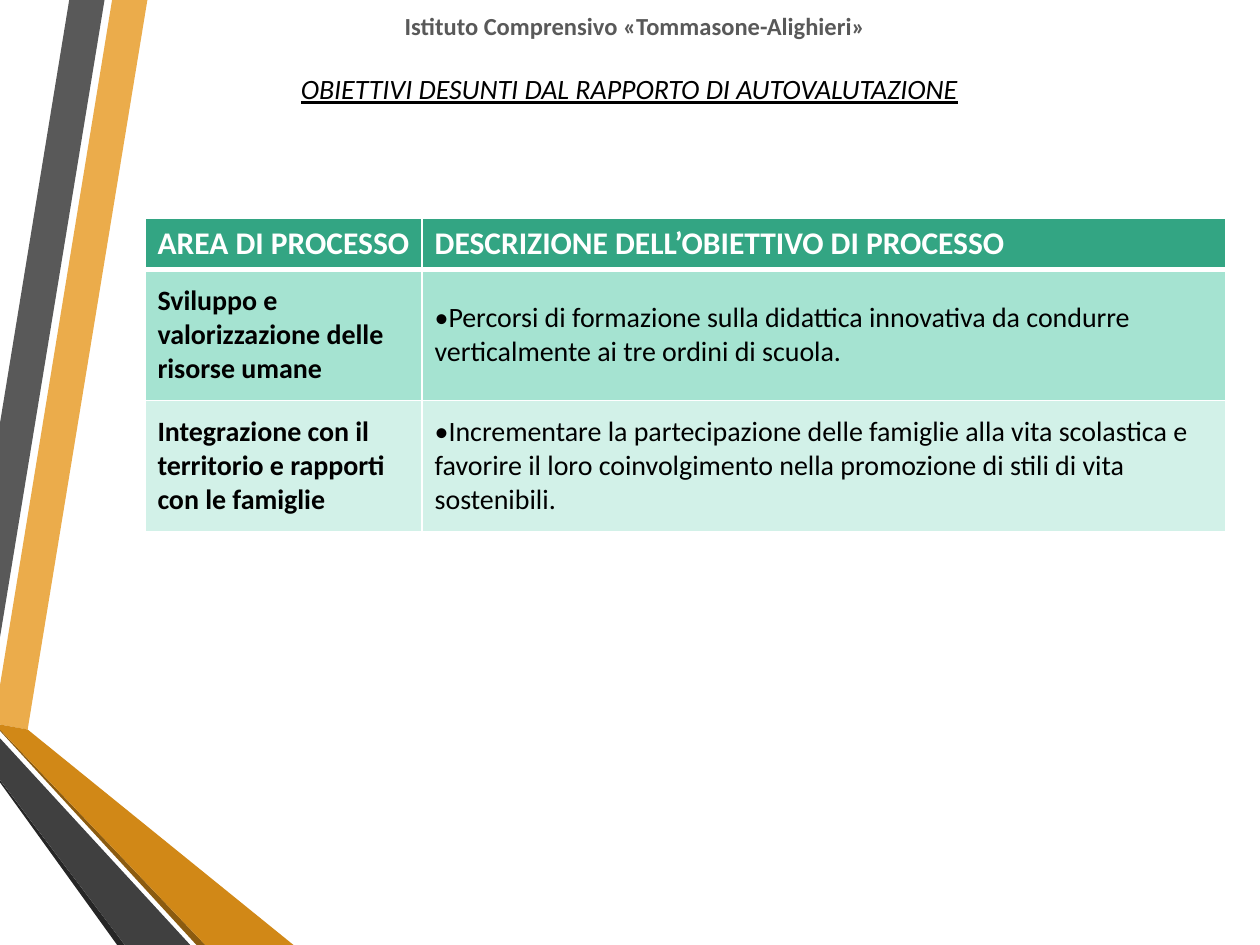
"""Build a slide listing the process objectives drawn from a school's self-evaluation report."""
from lxml import etree
from pptx import Presentation
from pptx.dml.color import RGBColor
from pptx.enum import text
from pptx.oxml import ns
from pptx.util import Inches, Pt

FONT = "Calibri"
BLACK = RGBColor(0, 0, 0)
WHITE = RGBColor(0xFF, 0xFF, 0xFF)
GRAY = RGBColor(0x59, 0x59, 0x59)
HEADER_GREEN = RGBColor(0x33, 0xA5, 0x83)
ROW_GREENS = [RGBColor(0xA5, 0xE3, 0xD1), RGBColor(0xD2, 0xF1, 0xE8)]
LIGHT_ORANGE = RGBColor(0xEB, 0xAC, 0x4B)
DARK_ORANGE = RGBColor(0xD1, 0x88, 0x17)
BROWN = RGBColor(0x8B, 0x5B, 0x10)
DARK_GRAY = RGBColor(0x40, 0x40, 0x40)
NEAR_BLACK = RGBColor(0x26, 0x26, 0x26)

SCHOOL = "Istituto Comprensivo «Tommasone-Alighieri»"
TITLE = "OBIETTIVI DESUNTI DAL RAPPORTO DI AUTOVALUTAZIONE"
ROWS = [
    ("AREA DI PROCESSO", "DESCRIZIONE DELL’OBIETTIVO DI PROCESSO"),
    ("Sviluppo e valorizzazione delle risorse umane",
     "Percorsi di formazione sulla didattica innovativa da condurre verticalmente "
     "ai tre ordini di scuola."),
    ("Integrazione con il territorio e rapporti con le famiglie",
     "Incrementare la partecipazione delle famiglie alla vita scolastica e favorire "
     "il loro coinvolgimento nella promozione di stili di vita sostenibili."),
]
COLUMN_WIDTHS = [2.2, 6.38]
ROW_HEIGHTS = [0.41, 1.04, 1.04]

RIBBONS = [
    (LIGHT_ORANGE, [(0, 5.44), (0, 5.75), (0.22, 5.79), (1.17, 0), (0.89, 0)]),
    (GRAY, [(0.83, 0), (0.55, 0), (0, 3.36), (0, 5.06)]),
    (NEAR_BLACK, [(0, 6.19), (0, 6.21), (0.93, 7.5), (0.99, 7.5)]),
    (BROWN, [(0, 5.79), (0, 5.8), (1.56, 7.5), (1.63, 7.5)]),
    (DARK_ORANGE, [(0, 5.79), (1.63, 7.5), (2.33, 7.5), (0.22, 5.79), (0, 5.75)]),
    (DARK_GRAY, [(0, 6.19), (0.99, 7.5), (1.51, 7.5), (0, 5.86)]),
]


def add_ribbon(slide, color, points):
    corners = [(Inches(x), Inches(y)) for x, y in points]
    builder = slide.shapes.build_freeform(*corners[0], scale=1.0)
    builder.add_line_segments(corners[1:], close=True)
    shape = builder.convert_to_shape()
    shape.shadow.inherit = False
    shape.fill.solid()
    shape.fill.fore_color.rgb = color
    shape.line.fill.background()


def style(paragraph, size, color, bold=False, align=text.PP_ALIGN.LEFT):
    paragraph.alignment = align
    font = paragraph.font
    font.name, font.size, font.bold = FONT, Pt(size), bold
    font.color.rgb = color


def write_line(shape, content, size, color, bold=False):
    frame = shape.text_frame
    frame.word_wrap = True
    frame.auto_size = text.MSO_AUTO_SIZE.NONE
    frame.vertical_anchor = text.MSO_ANCHOR.TOP
    frame.text = content
    paragraph = frame.paragraphs[0]
    style(paragraph, size, color, bold, text.PP_ALIGN.CENTER)
    return paragraph


def add_title(slide):
    title = slide.shapes.title
    title.left, title.top = Inches(0.9), Inches(0.52)
    title.width, title.height = Inches(8.19), Inches(0.37)
    paragraph = write_line(title, TITLE, 16, BLACK)
    paragraph.font.italic = True
    paragraph.font.underline = True


def add_borders(cell, bottom):
    properties = cell._tc.get_or_add_tcPr()
    for side, width in (("L", 1), ("R", 1), ("T", 1), ("B", bottom)):
        line = etree.SubElement(properties, ns.qn(f"a:ln{side}"), w=str(Pt(width)))
        fill = etree.SubElement(line, ns.qn("a:solidFill"))
        etree.SubElement(fill, ns.qn("a:srgbClr"), val=str(WHITE))


def add_bullet(paragraph):
    properties = paragraph._p.get_or_add_pPr()
    properties.insert(0, etree.Element(ns.qn("a:buFont"), typeface=FONT))
    properties.insert(1, etree.Element(ns.qn("a:buChar"), char="•"))


def fill_cell(cell, row, column, content):
    header = row == 0
    add_borders(cell, 3 if header else 1)
    cell.fill.solid()
    cell.fill.fore_color.rgb = HEADER_GREEN if header else ROW_GREENS[row - 1]
    cell.vertical_anchor = text.MSO_ANCHOR.MIDDLE
    cell.text = content
    paragraph = cell.text_frame.paragraphs[0]
    centered = header and column == 0
    style(paragraph, 18 if header else 16, WHITE if header else BLACK,
          header or column == 0,
          text.PP_ALIGN.CENTER if centered else text.PP_ALIGN.LEFT)
    if column == 1 and not header:
        add_bullet(paragraph)


def add_objectives(slide):
    frame = slide.shapes.add_table(
        len(ROWS), len(COLUMN_WIDTHS), Inches(1.15), Inches(1.73),
        Inches(sum(COLUMN_WIDTHS)), Inches(sum(ROW_HEIGHTS)))
    table = frame.table
    for column, width in zip(table.columns, COLUMN_WIDTHS):
        column.width = Inches(width)
    for row, height in zip(table.rows, ROW_HEIGHTS):
        row.height = Inches(height)
    for row, contents in enumerate(ROWS):
        for column, content in enumerate(contents):
            fill_cell(table.cell(row, column), row, column, content)


def main():
    presentation = Presentation()
    presentation.slide_width, presentation.slide_height = Inches(10), Inches(7.5)
    slide = presentation.slides.add_slide(presentation.slide_layouts[5])
    for color, points in RIBBONS:
        add_ribbon(slide, color, points)
    add_title(slide)
    add_objectives(slide)
    school = slide.shapes.add_textbox(
        Inches(1.14), Inches(0.04), Inches(7.8), Inches(0.34))
    write_line(school, SCHOOL, 14, GRAY, bold=True)
    presentation.save("out.pptx")


if __name__ == "__main__":
    main()
